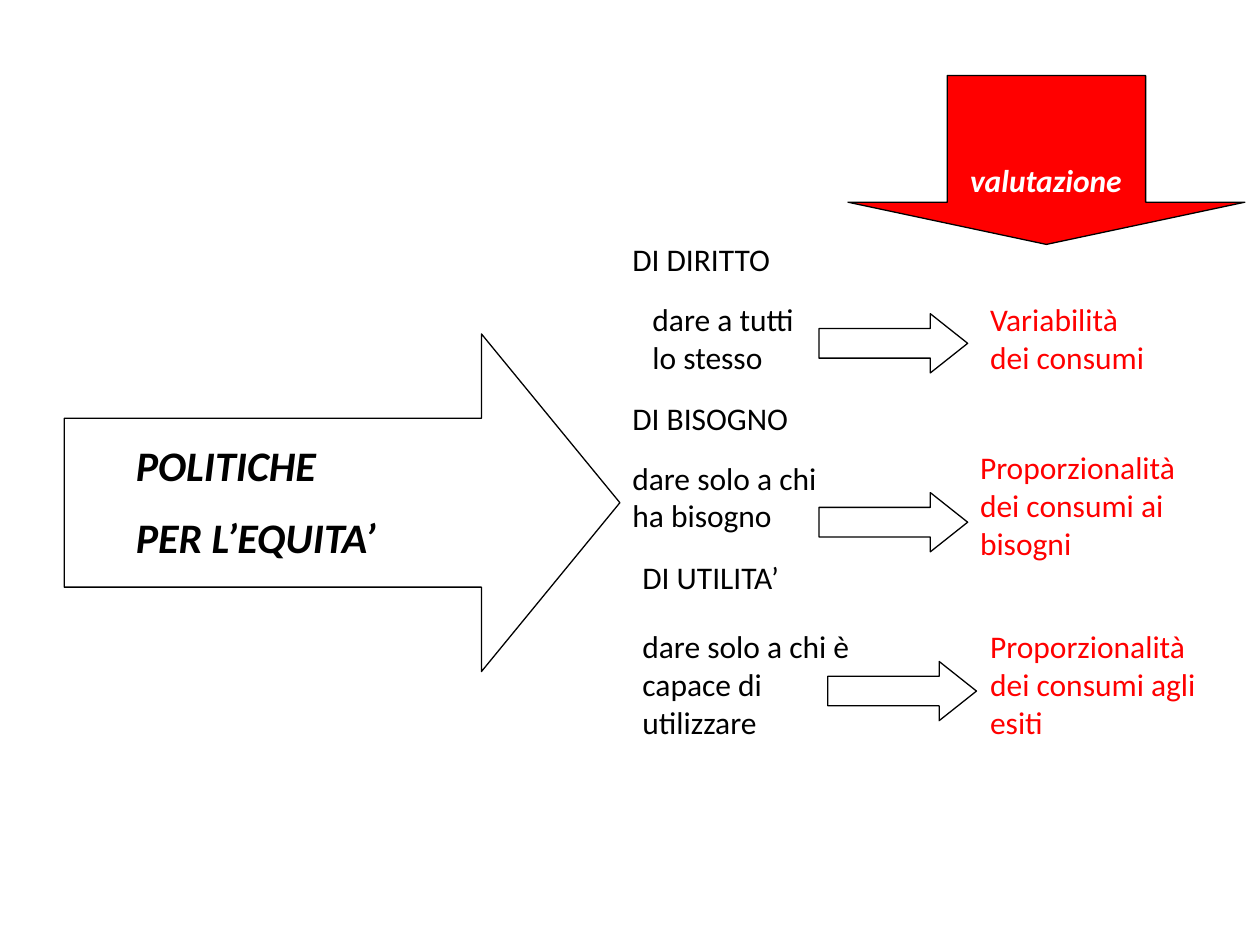
from pptx import Presentation
from pptx.dml.color import RGBColor
from pptx.enum.shapes import MSO_SHAPE
from pptx.enum.text import MSO_AUTO_SIZE
from pptx.util import Inches, Pt

COLORS = {"black": "000000", "white": "FFFFFF", "red": "FF0000"}

presentation = Presentation()
presentation.slide_width = Inches(10)
presentation.slide_height = Inches(7.5)
slide = presentation.slides.add_slide(presentation.slide_layouts[6])


def add_arrow(kind, left, top, width, height, fill, head):
    """Add a block arrow; head is its head length relative to the shorter side."""
    shape = slide.shapes.add_shape(
        kind, Inches(left), Inches(top), Inches(width), Inches(height))
    shape.adjustments[0] = 0.5
    shape.adjustments[1] = head
    shape.shadow.inherit = False
    shape.fill.solid()
    shape.fill.fore_color.rgb = RGBColor.from_string(COLORS[fill])
    shape.line.color.rgb = RGBColor.from_string(COLORS["black"])
    shape.line.width = Pt(0.75)


def add_text(lines, left, top, width, height, color="black", size=18, strong=False):
    """Add a text box with one paragraph per line; strong means bold italic."""
    frame = slide.shapes.add_textbox(
        Inches(left), Inches(top), Inches(width), Inches(height)).text_frame
    frame.word_wrap = True
    frame.auto_size = MSO_AUTO_SIZE.SHAPE_TO_FIT_TEXT
    frame.text = "\n".join(lines)
    for index, paragraph in enumerate(frame.paragraphs):
        if index:
            paragraph.space_before = Pt(size / 2)
        paragraph.font.name = "Calibri"
        paragraph.font.size = Pt(size)
        paragraph.font.bold = strong
        paragraph.font.italic = strong
        paragraph.font.color.rgb = RGBColor.from_string(COLORS[color])


# Evaluation and policy arrows
add_arrow(MSO_SHAPE.DOWN_ARROW, 6.73, 0.6, 3.15, 1.34, "red", 0.25)
add_text(["valutazione"], 7.6, 1.23, 1.65, 0.4, "white", strong=True)
add_arrow(MSO_SHAPE.RIGHT_ARROW, 0.51, 2.65, 4.41, 2.68, "white", 0.41)
add_text(["POLITICHE", "PER L’EQUITA’"], 0.98, 3.44, 3.47, 1.1, size=24, strong=True)

# Headings of the three kinds of equity
headings = [("DI DIRITTO", 4.92), ("DI BISOGNO", 4.92), ("DI UTILITA’", 5)]
for row, (heading, left) in enumerate(headings):
    add_text([heading], left, 1.86 + row * 1.26, 3.47, 0.4)

# Principles (text, left, top, width, height)
principles = [
    ("dare a tutti lo stesso", 5.08, 2.33, 1.54, 0.7),
    ("dare solo a chi ha bisogno", 4.92, 3.59, 1.89, 0.7),
    ("dare solo a chi è capace di utilizzare", 5, 4.93, 1.89, 1),
]
for principle, *box in principles:
    add_text([principle], *box)

# Expected effects on consumption (text, left, top, width, height)
effects = [
    ("Variabilità dei consumi", 7.76, 2.33, 1.54, 0.7),
    ("Proporzionalità dei consumi ai bisogni", 7.68, 3.51, 1.97, 1),
    ("Proporzionalità dei consumi agli esiti", 7.76, 4.93, 1.97, 1),
]
for effect, *box in effects:
    add_text([effect], *box, color="red")

# Arrows from principle to effect
for left, top in [(6.5, 2.49), (6.5, 3.91), (6.57, 5.25)]:
    add_arrow(MSO_SHAPE.RIGHT_ARROW, left, top, 1.18, 0.47, "white", 0.63)

presentation.save("out.pptx")
